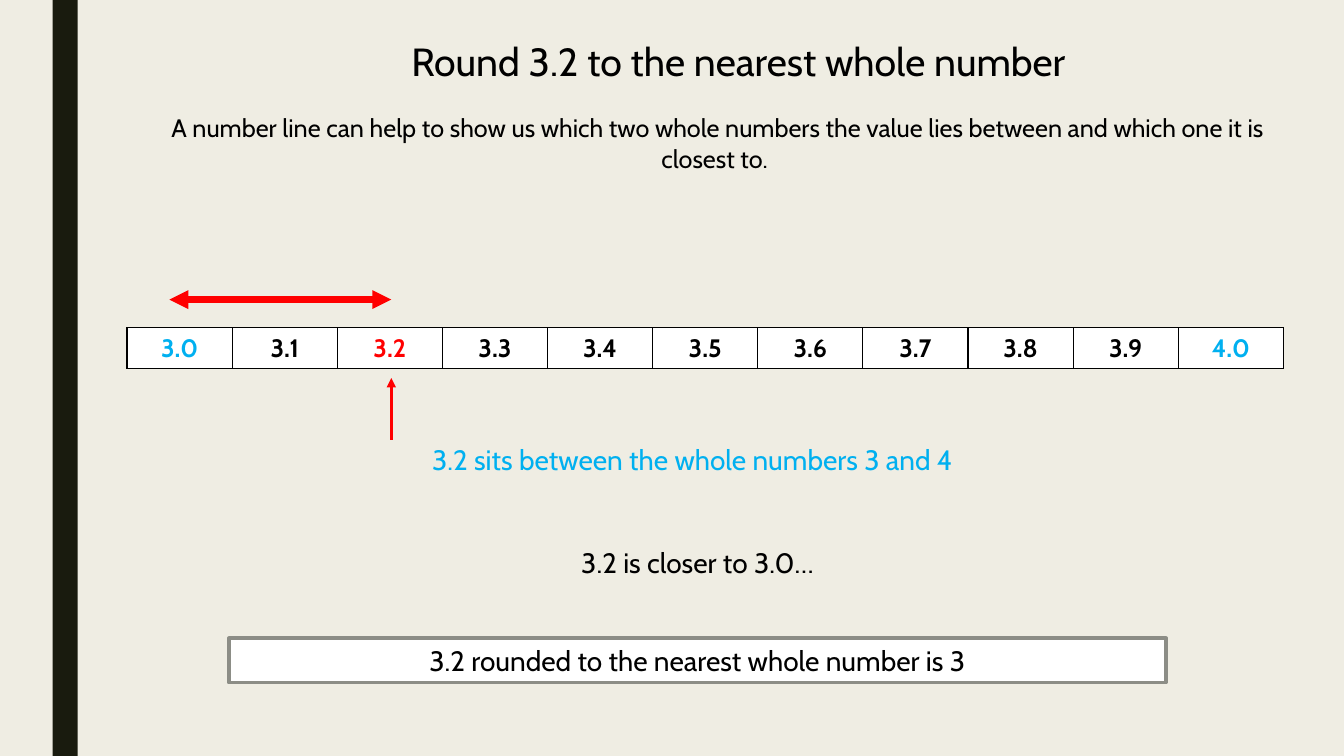
"""Build a slide that rounds 3.2 to the nearest whole number on a number line."""
from lxml import etree
from pptx import Presentation
from pptx.dml.color import RGBColor
from pptx.enum.shapes import MSO_CONNECTOR, MSO_SHAPE
from pptx.enum.text import MSO_ANCHOR, PP_ALIGN
from pptx.oxml.ns import qn
from pptx.util import Pt

STRAIGHT = MSO_CONNECTOR.STRAIGHT
RECTANGLE = MSO_SHAPE.RECTANGLE
TOP = MSO_ANCHOR.TOP
CENTER = PP_ALIGN.CENTER
BLACK, WHITE, RED, BLUE = "000000", "FFFFFF", "FF0000", "00B0F0"


def rgb(code):
    return RGBColor.from_string(code)


def write(frame, text, size, color, bold=False):
    frame.word_wrap = True
    frame.vertical_anchor = TOP
    para = frame.paragraphs[0]
    para.text = text
    para.alignment = CENTER
    para.font.name = "Cabin"
    para.font.size = Pt(size)
    para.font.bold = bold
    para.font.color.rgb = rgb(color)


deck = Presentation()
deck.slide_width, deck.slide_height = Pt(960), Pt(540)
page = deck.slides.add_slide(deck.slide_layouts[5])
page.background.fill.solid()
page.background.fill.fore_color.rgb = rgb("EFEDE3")

side_bar = page.shapes.add_shape(RECTANGLE, Pt(37.5), Pt(0), Pt(18), Pt(540))
side_bar.shadow.inherit = False
side_bar.fill.solid()
side_bar.fill.fore_color.rgb = rgb("191B0E")
side_bar.line.fill.background()

title = page.shapes.title
title.left, title.top, title.width, title.height = Pt(282.5), Pt(23), Pt(489.5), Pt(41)
write(title.text_frame, "Round 3.2 to the nearest whole number", 28, BLACK)

sentences = [
    ("A number line can help to show us which two whole numbers the value lies "
     "between and which one it is closest to. ", 90.5, 77, 844, 51, 18, BLACK),
    ("3.2 sits between the whole numbers 3 and 4", 160, 312.5, 669.5, 31.5, 20, BLUE),
    ("3.2 is closer to 3.0…", 163.5, 386, 669.5, 31.5, 20, BLACK),
]
for text, left, top, width, height, size, color in sentences:
    box = page.shapes.add_textbox(Pt(left), Pt(top), Pt(width), Pt(height))
    write(box.text_frame, text, size, color)

answer = page.shapes.add_shape(RECTANGLE, Pt(163.5), Pt(456), Pt(669.5), Pt(31.5))
answer.shadow.inherit = False
answer.fill.solid()
answer.fill.fore_color.rgb = rgb(WHITE)
answer.line.color.rgb = rgb("8C8D86")
answer.line.width = Pt(2.75)
write(answer.text_frame, "3.2 rounded to the nearest whole number is 3", 20, BLACK)

tenths = range(30, 41)
highlights = {30: BLUE, 32: RED, 40: BLUE}
number_line = page.shapes.add_table(
    1, len(tenths), Pt(90.75), Pt(234), Pt(826), Pt(29.5)).table
number_line.first_row = False
number_line.horz_banding = False
for column, tenth in enumerate(tenths):
    number_line.columns[column].width = Pt(826 / len(tenths))
    cell = number_line.cell(0, column)
    write(cell.text_frame, f"{tenth / 10:.1f}", 18, highlights.get(tenth, BLACK), True)
    cell.fill.solid()
    cell.fill.fore_color.rgb = rgb(WHITE)
    properties = cell._tc.get_or_add_tcPr()
    for index, edge in enumerate(("a:lnL", "a:lnR", "a:lnT", "a:lnB")):
        border = etree.Element(qn(edge), w=str(Pt(1)))
        paint = etree.SubElement(border, qn("a:solidFill"))
        etree.SubElement(paint, qn("a:srgbClr"), val=BLACK)
        properties.insert(index, border)

arrows = [
    (279.5, 314, 279.5, 270, 2.25, ["a:tailEnd"]),
    (121, 214, 279.5, 214, 4.5, ["a:headEnd", "a:tailEnd"]),
]
for start_x, start_y, end_x, end_y, weight, ends in arrows:
    arrow = page.shapes.add_connector(
        STRAIGHT, Pt(start_x), Pt(start_y), Pt(end_x), Pt(end_y))
    arrow.line.color.rgb = rgb(RED)
    arrow.line.width = Pt(weight)
    for end in ends:
        etree.SubElement(arrow.line._get_or_add_ln(), qn(end), type="triangle")
    etree.SubElement(arrow._element.spPr, qn("a:effectLst"))

deck.save("out.pptx")
